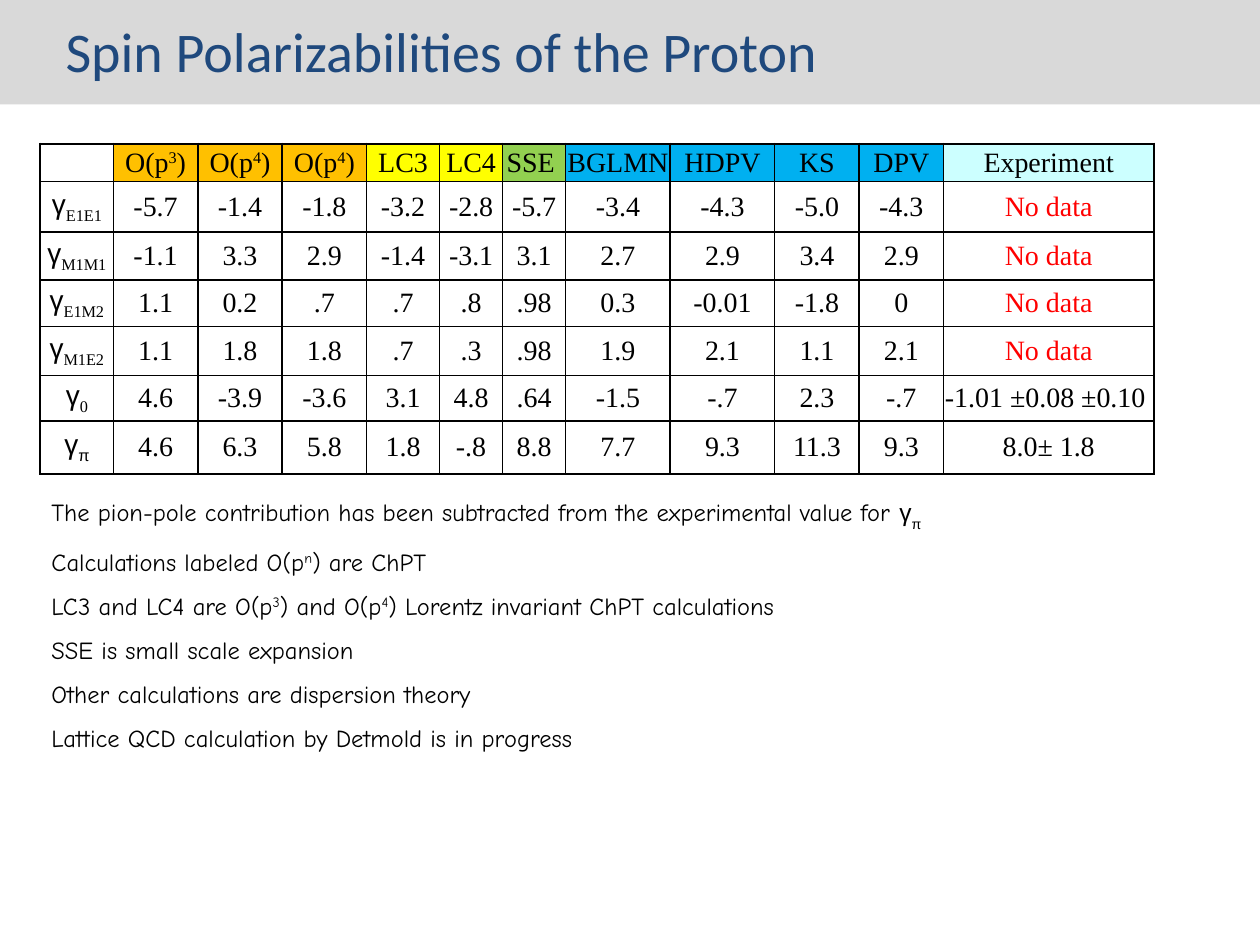
import dataclasses

import pptx
import pptx.dml.color
import pptx.enum.shapes
import pptx.enum.text
import pptx.oxml
import pptx.oxml.ns
import pptx.util
from pptx.util import Inches


@dataclasses.dataclass(frozen=True)
class Theme:
    """Colours, fonts and sizes of the slide."""
    band: str = "D9D9D9"
    title: str = "1F497D"
    text: str = "000000"
    missing: str = "FF0000"
    chiral: str = "FFC000"
    lorentz: str = "FFFF00"
    expansion: str = "92D050"
    dispersion: str = "00B0F0"
    experiment: str = "CCFFFF"
    title_font: str = "Calibri"
    table_font: str = "Times New Roman"
    note_font: str = "Comic Neue"
    greek_font: str = "Arial"
    title_size: int = 32
    table_size: int = 16
    note_size: int = 14
    inner_line: float = 1
    outer_line: float = 1.5


THEME = Theme()
MISSING = "No data"
COLUMN_WIDTHS = [0.58, 0.67, 0.67, 0.67, 0.58, 0.5, 0.5, 0.83, 0.83, 0.67, 0.67, 1.67]
ROW_HEIGHTS = [0.26, 0.4, 0.38, 0.37, 0.39, 0.36, 0.42]
HEADER_FILLS = (
    [None] + [THEME.chiral] * 3 + [THEME.lorentz] * 2 + [THEME.expansion]
    + [THEME.dispersion] * 4 + [THEME.experiment]
)
ROWS = [
    ["", "O(p|^3|)", "O(p|^4|)", "O(p|^4|)", "LC3", "LC4", "SSE ", "BGLMN", "HDPV", "KS", "DPV", "Experiment"],
    ["γ|_E1E1", "-5.7", "-1.4", "-1.8", "-3.2", "-2.8", "-5.7", "-3.4", "-4.3", "-5.0", "-4.3", MISSING],
    ["γ|_M1M1", "-1.1", "3.3", "2.9", "-1.4", "-3.1", "3.1", "2.7", "2.9", "3.4", "2.9", MISSING],
    ["γ|_E1M2", "1.1", "0.2", ".7", ".7", ".8", ".98", "0.3", "-0.01", "-1.8", "0", MISSING],
    ["γ|_M1E2", "1.1", "1.8", "1.8", ".7", ".3", ".98", "1.9", "2.1", "1.1", "2.1", MISSING],
    ["γ|_0", "4.6", "-3.9", "-3.6", "3.1", "4.8", ".64", "-1.5", "-.7", "2.3", "-.7", "-1.01 ±0.08 ±0.10 "],
    ["γ|_π", "4.6", "6.3", "5.8", "1.8", "-.8", "8.8", "7.7", "9.3", "11.3", "9.3", "8.0± 1.8"],
]
NOTES = [
    "The pion-pole contribution has been subtracted from the experimental value for |γ|_π",
    "Calculations labeled O(p|^n|) are ChPT",
    "LC3 and LC4 are O(p|^3|) and O(p|^4|) Lorentz invariant ChPT calculations",
    "SSE is small scale expansion",
    "Other calculations are dispersion theory",
    "Lattice QCD calculation by Detmold is in progress",
]


def rgb(color):
    """Return a colour object for a hex string."""
    return pptx.dml.color.RGBColor.from_string(color)


def format_run(run, font, size, color):
    """Set the font, size and colour of a run."""
    run.font.name = font
    run.font.size = pptx.util.Pt(size)
    run.font.color.rgb = rgb(color)


def write_formula(paragraph, markup, font, size, color, subscript):
    """Write pieces split by bars, raising those after ^ and lowering those after _."""
    baselines = {"^": 30, "_": subscript}
    for piece in markup.split("|"):
        baseline = baselines.get(piece[:1])
        run = paragraph.add_run()
        run.text = piece[1:] if baseline else piece
        format_run(run, THEME.greek_font if run.text in ("γ", "π") else font, size, color)
        if baseline:
            run._r.get_or_add_rPr().set("baseline", str(baseline * 1000))


def set_border(cell, side, width):
    """Draw one side of a cell: L, R, T or B."""
    line = pptx.oxml.parse_xml(
        f'<a:ln{side} {pptx.oxml.ns.nsdecls("a")} w="{pptx.util.Pt(width)}">'
        f'<a:solidFill><a:srgbClr val="{THEME.text}"/></a:solidFill></a:ln{side}>'
    )
    properties = cell._tc.get_or_add_tcPr()
    properties.insert("LRTB".index(side), line)


def add_title_band(slide, left, top, width, height):
    """Place the grey band and the title on it."""
    band = slide.shapes.add_shape(
        pptx.enum.shapes.MSO_SHAPE.RECTANGLE, left, top, width, height
    )
    band.shadow.inherit = False
    band.fill.solid()
    band.fill.fore_color.rgb = rgb(THEME.band)
    band.line.fill.background()
    slide.shapes._spTree.insert(2, band._element)

    title = slide.shapes.title
    title.left, title.top = left + Inches(0.42), top + Inches(0.08)
    title.width, title.height = Inches(6.23), Inches(0.64)
    frame = title.text_frame
    frame.text = "Spin Polarizabilities of the Proton"
    frame.word_wrap = False
    frame.auto_size = pptx.enum.text.MSO_AUTO_SIZE.SHAPE_TO_FIT_TEXT
    frame.vertical_anchor = pptx.enum.text.MSO_ANCHOR.TOP
    frame.paragraphs[0].alignment = pptx.enum.text.PP_ALIGN.LEFT
    format_run(frame.paragraphs[0].runs[0], THEME.title_font, THEME.title_size, THEME.title)


def fill_cell(cell, markup, fill):
    """Write a cell and set its margins and fill."""
    cell.margin_left = cell.margin_right = cell.margin_top = cell.margin_bottom = 0
    cell.vertical_anchor = pptx.enum.text.MSO_ANCHOR.MIDDLE
    if fill:
        cell.fill.solid()
        cell.fill.fore_color.rgb = rgb(fill)
    else:
        cell.fill.background()
    paragraph = cell.text_frame.paragraphs[0]
    paragraph.alignment = pptx.enum.text.PP_ALIGN.CENTER
    color = THEME.missing if markup == MISSING else THEME.text
    write_formula(paragraph, markup, THEME.table_font, THEME.table_size, color, -25)


def add_polarizability_table(slide, left, top, width, height):
    """Place the table of calculated and measured values."""
    table = slide.shapes.add_table(
        len(ROWS), len(COLUMN_WIDTHS), left, top, width, height
    ).table
    table.first_row = table.horz_banding = False
    for column, column_width in zip(table.columns, COLUMN_WIDTHS):
        column.width = Inches(column_width)
    last_row = len(ROWS) - 1
    for row_index, values in enumerate(ROWS):
        table.rows[row_index].height = Inches(ROW_HEIGHTS[row_index])
        for column_index, markup in enumerate(values):
            cell = table.cell(row_index, column_index)
            fill_cell(cell, markup, HEADER_FILLS[column_index] if row_index == 0 else None)
            outer = {"L": column_index == 0, "T": row_index == 0, "B": row_index == last_row}
            for side in "LRTB":
                set_border(cell, side, THEME.outer_line if outer.get(side) else THEME.inner_line)


def add_notes_text(slide, left, top, width, height):
    """Place the remarks below the table."""
    frame = slide.shapes.add_textbox(left, top, width, height).text_frame
    frame.word_wrap = True
    frame.auto_size = pptx.enum.text.MSO_AUTO_SIZE.SHAPE_TO_FIT_TEXT
    frame.vertical_anchor = pptx.enum.text.MSO_ANCHOR.MIDDLE
    for index, markup in enumerate(NOTES):
        paragraph = frame.add_paragraph() if index else frame.paragraphs[0]
        paragraph.alignment = pptx.enum.text.PP_ALIGN.JUSTIFY
        paragraph.line_spacing = 1.5
        write_formula(paragraph, markup, THEME.note_font, THEME.note_size, THEME.text, -30)


def main():
    """Build and save the presentation."""
    presentation = pptx.Presentation()
    presentation.slide_width, presentation.slide_height = Inches(10), Inches(7.5)
    slide = presentation.slides.add_slide(presentation.slide_layouts.get_by_name("Title Only"))
    add_title_band(slide, 0, 0, presentation.slide_width, Inches(0.83))
    add_polarizability_table(slide, Inches(0.32), Inches(1.14), Inches(8.83), Inches(2.58))
    add_notes_text(slide, Inches(0.31), Inches(3.78), Inches(8.75), Inches(2.22))
    presentation.save("out.pptx")


if __name__ == "__main__":
    main()
